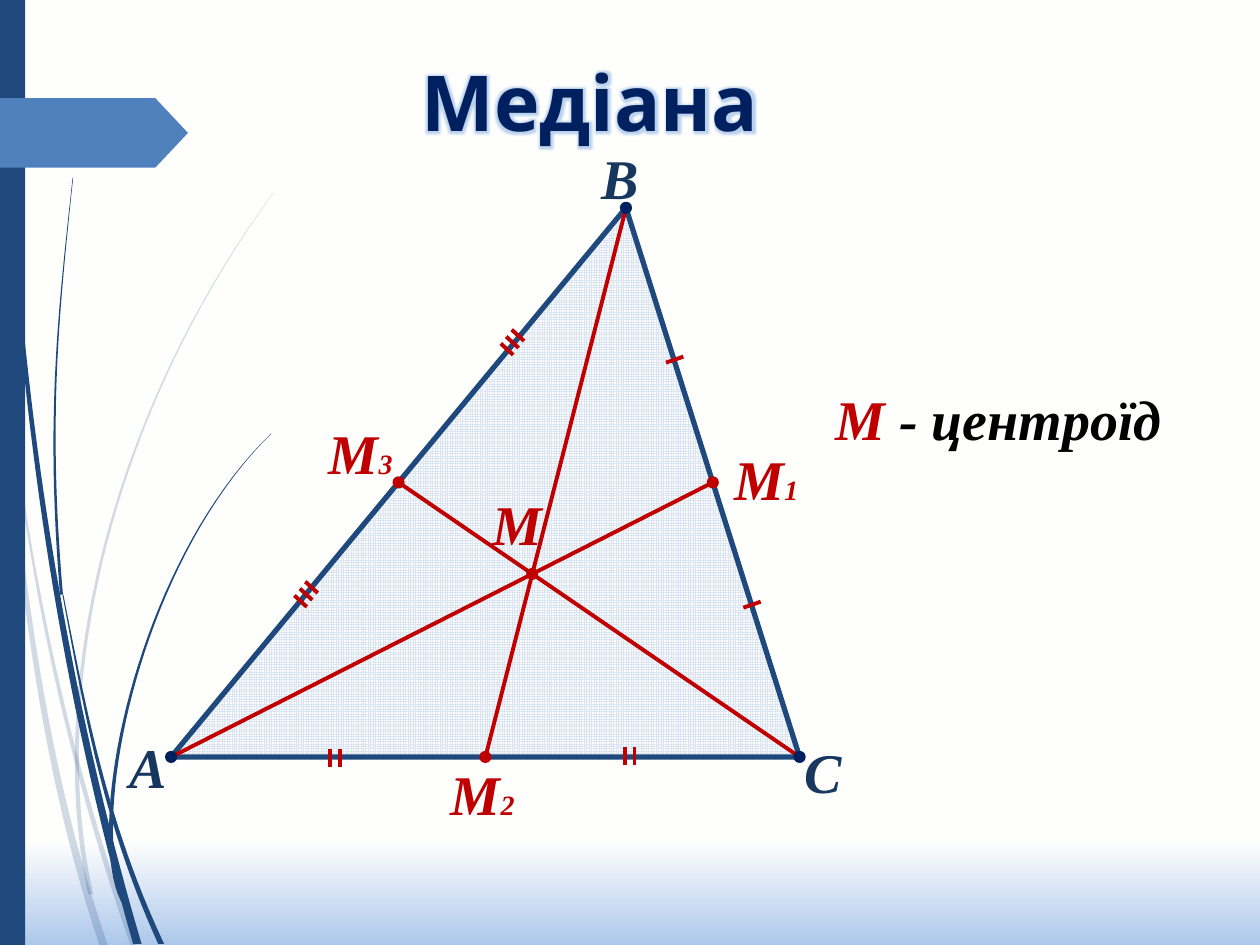
from lxml import etree
from pptx import Presentation
from pptx import util as u
from pptx.dml.color import RGBColor
from pptx.enum import dml, shapes, text
from pptx.oxml.ns import qn

NAVY, BLUE, RED, INK = "002060", "1F497D", "C00000", "17375E"
rgb = RGBColor.from_string


def add_shape(kind, box, fill, line=None, width=0):
    sp = s.shapes.add_shape(kind, *[u.Cm(v) for v in box])
    sp.shadow.inherit = False
    sp.fill.solid()
    sp.fill.fore_color.rgb = rgb(fill)
    if line:
        sp.line.color.rgb = rgb(line)
        sp.line.width = u.Pt(width)
    else:
        sp.line.fill.background()
    return sp


def add_label(box, runs):
    sp = s.shapes.add_textbox(*[u.Cm(v) for v in box])
    tf = sp.text_frame
    for words, size, color in runs:
        r = tf.paragraphs[0].add_run()
        r.text = words
        r.font.name = "Times New Roman"
        r.font.size = u.Pt(size)
        r.font.bold = r.font.italic = True
        r.font.color.rgb = rgb(color)
    return tf


prs = Presentation()
prs.slide_width, prs.slide_height = u.Cm(25.4), u.Cm(19.05)
s = prs.slides.add_slide(prs.slide_layouts[5])

bg = s.background.fill
bg.gradient()
bg.gradient_angle = 270
for stop, pos, color in zip(bg.gradient_stops, (0.89, 1), ("FEFEFD", "ADC8EB")):
    stop.position = pos
    stop.color.rgb = rgb(color)

# Each stem is a cubic through four points, widening from tip to foot.
pale_stems = [
    (0.05, 0.17, [(0, 7.37), (0.43, 11.25), (1.05, 15.16), (2.09, 19.05)]),
    (0.03, 0.12, [(0.28, 8.76), (0.83, 12.19), (1.62, 15.62), (2.69, 19.05)]),
    (0.01, 0.1, [(5.51, 3.89), (2.81, 8.84), (1.63, 13.74), (1.83, 18.03)]),
]
dark_stems = [
    (0.03, 0.17, [(0.06, 0), (0.41, 6.35), (1.28, 12.7), (2.77, 19.03)]),
    (0.02, 0.12, [(1.27, 11.99), (1.74, 14.35), (2.34, 16.66), (3.25, 19.03)]),
    (0.01, 0.06, [(1.47, 3.58), (1.21, 6.22), (1.1, 8.86), (1.24, 11.99)]),
    (0.01, 0.1, [(5.47, 8.74), (3.3, 12.07), (2.3, 15.75), (2.54, 18.26)]),
]
STEPS = 40
for stems, opacity in ((pale_stems, 20), (dark_stems, 100)):
    group = s.shapes.add_group_shape()
    for tip, foot, points in stems:
        left, right = [], []
        for i in range(STEPS + 1):
            t = 3 * i / STEPS
            weights = (-(t - 1) * (t - 2) * (t - 3) / 6, t * (t - 2) * (t - 3) / 2,
                       -t * (t - 1) * (t - 3) / 2, t * (t - 1) * (t - 2) / 6)
            x, y = [sum(w * c for w, c in zip(weights, axis)) for axis in zip(*points)]
            half = (tip + (foot - tip) * i / STEPS) / 2
            left.append((u.Cm(x - half), u.Cm(y)))
            right.append((u.Cm(x + half), u.Cm(y)))
        builder = group.shapes.build_freeform(*left[0])
        builder.add_line_segments(left[1:] + right[::-1], close=True)
        sp = builder.convert_to_shape()
        sp.shadow.inherit = False
        sp.line.fill.background()
        sp.fill.solid()
        sp.fill.fore_color.rgb = rgb(BLUE)
        clr = sp._element.spPr.find(qn("a:solidFill"))[0]
        etree.SubElement(clr, qn("a:alpha"), val=str(opacity * 1000))

add_shape(shapes.MSO_SHAPE.RECTANGLE, (0, 0, 0.51, 19.05), BLUE)
banner = add_shape(shapes.MSO_SHAPE.PENTAGON, (0, 1.98, 3.79, 1.4), "4F81BD")
banner.adjustments[0] = 0.47

title = s.shapes.title
title.left, title.top, title.width, title.height = [u.Cm(v) for v in (4.47, 0.97, 14.86, 2.13)]
tf = title.text_frame
tf.text = "Медіана"
tf.vertical_anchor = text.MSO_ANCHOR.MIDDLE
p = tf.paragraphs[0]
p.alignment = text.PP_ALIGN.CENTER
r = p.runs[0]
r.font.name = "Quicksand"
r.font.size = u.Pt(44)
r.font.bold = True
r.font.color.rgb = rgb(NAVY)
rPr = r.font._element
outline = etree.Element(qn("a:ln"), w=str(u.Pt(0.75)))
outline_fill = etree.SubElement(outline, qn("a:solidFill"))
etree.SubElement(outline_fill, qn("a:srgbClr"), val="254061")
effects = etree.Element(qn("a:effectLst"))
glow = etree.SubElement(effects, qn("a:glow"), rad=str(u.Pt(5)))
glow_color = etree.SubElement(glow, qn("a:srgbClr"), val="8EB4E3")
etree.SubElement(glow_color, qn("a:alpha"), val="60000")
rPr.insert(0, outline)
rPr.insert(2, effects)

A, B, C = (3.45, 15.26), (12.62, 4.19), (16.12, 15.26)
M1, M2, M3 = [((x1 + x2) / 2, (y1 + y2) / 2) for (x1, y1), (x2, y2) in ((B, C), (A, C), (A, B))]
M = [sum(axis) / 3 for axis in zip(A, B, C)]

base, height = C[0] - A[0], A[1] - B[1]
triangle = add_shape(shapes.MSO_SHAPE.ISOSCELES_TRIANGLE, (A[0], B[1], base, height), "FFFFFF", BLUE, 3)
triangle.adjustments[0] = (B[0] - A[0]) / base
triangle.fill.patterned()
triangle.fill.pattern = dml.MSO_PATTERN.SMALL_GRID
triangle.fill.fore_color.rgb = rgb("DCE6F2")
triangle.fill.back_color.rgb = rgb("FFFFFF")

red_lines = [(*A, *M1), (*B, *M2), (*C, *M3)]
# Per side: tick count, tick vector, step between ticks, centres of both tick groups.
side_ticks = [
    (1, (0.35, -0.12), (0, 0), [(13.6, 7.25), (15.16, 12.19)]),
    (2, (0, 0.38), (0.2, 0), [(6.75, 15.28), (12.69, 15.24)]),
    (3, (0.25, 0.23), (0.11, -0.14), [(6.17, 11.98), (10.33, 6.9)]),
]
for count, (dx, dy), (step_x, step_y), centres in side_ticks:
    for cx, cy in centres:
        for i in range(count):
            shift = i - (count - 1) / 2
            x, y = cx + shift * step_x, cy + shift * step_y
            red_lines.append((x - dx / 2, y - dy / 2, x + dx / 2, y + dy / 2))
for ends in red_lines:
    line = s.shapes.add_connector(shapes.MSO_CONNECTOR.STRAIGHT, *[u.Cm(v) for v in ends])
    line.line.color.rgb = rgb(RED)
    line.line.width = u.Pt(2.25)
    etree.SubElement(line._element.spPr, qn("a:effectLst"))

DOT = 0.2
for color, points in ((RED, (M1, M2, M3, M)), (NAVY, (A, B, C))):
    for x, y in points:
        box = (x - DOT / 2, y - DOT / 2, DOT, DOT)
        add_shape(shapes.MSO_SHAPE.FLOWCHART_CONNECTOR, box, color, color, 1.25)

point_labels = [
    (2.62, 14.76, 0.76, INK, "А", ""),
    (12.12, 2.9, 0.76, INK, "В", ""),
    (16.21, 14.86, 0.76, INK, "С", ""),
    (14.81, 8.97, 1.3, RED, "М", "1"),
    (9.09, 15.32, 1.9, RED, "M", "2"),
    (6.63, 8.43, 1.3, RED, "M", "3"),
    (9.93, 9.86, 1.02, RED, "M", ""),
]
for x, y, w, color, letter, index in point_labels:
    runs = [(letter, 32, color)] + [(digit, 16, color) for digit in index]
    tf = add_label((x, y, w, 1.37), runs)
    tf.word_wrap = False
    tf.margin_left = tf.margin_top = tf.margin_right = tf.margin_bottom = 0

tf = add_label((16.59, 7.62, 7.77, 1.63), [("М", 32, RED), (" - центроїд", 32, "000000")])
tf.word_wrap = True

prs.save("out.pptx")
